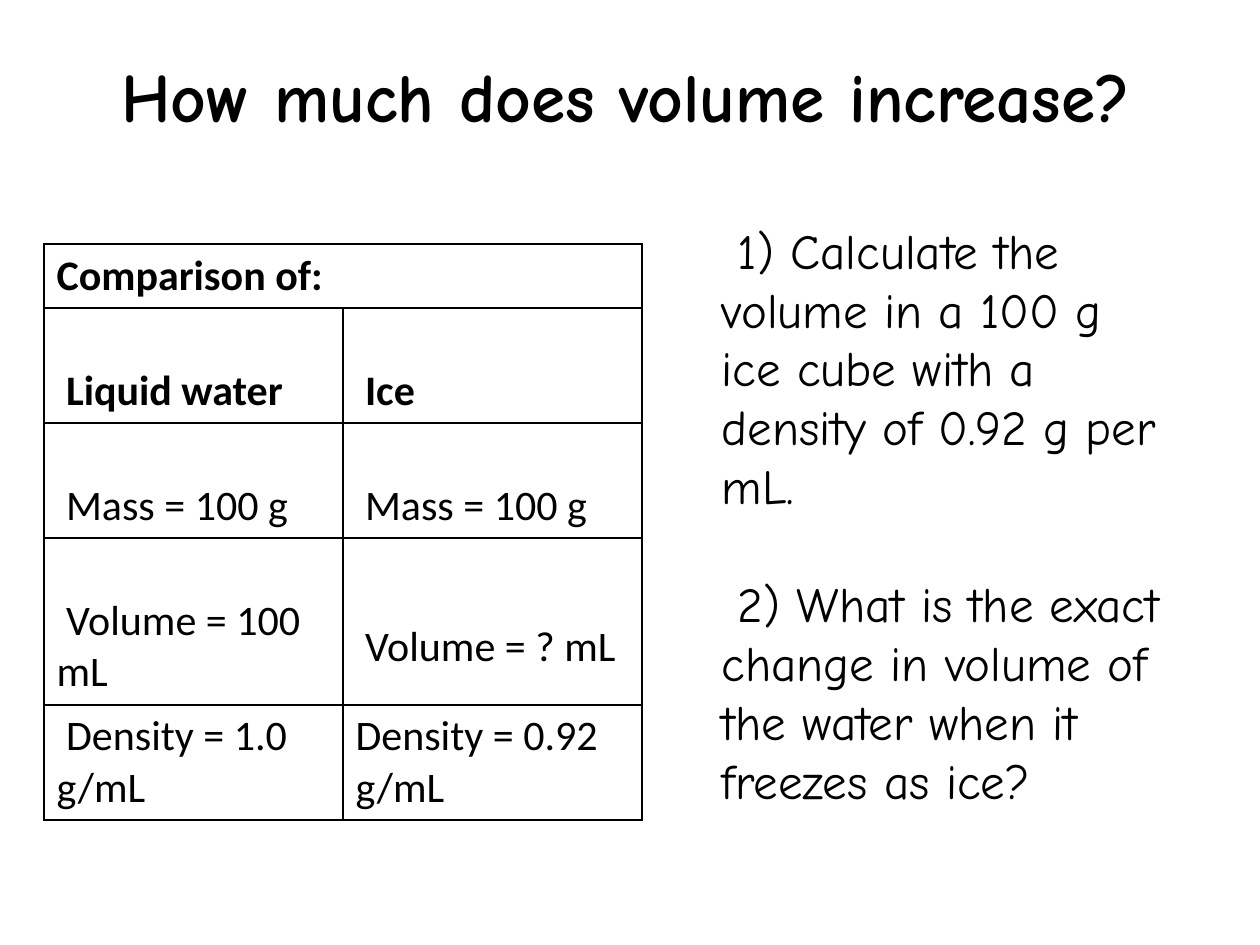
from lxml import etree
from pptx import Presentation
from pptx import util as u
from pptx.dml.color import RGBColor
from pptx.enum import text as t
from pptx.oxml.ns import qn

INK = "000000"
LINE = 51  # height of one line of table text

ROWS = [  # height, lines left free above the text, bold, words
    (64, 0, True, ["Comparison of:"]),
    (115, 1, True, [" Liquid water", " Ice"]),
    (115, 1, False, [" Mass = 100 g", " Mass = 100 g"]),
    (167, 1, False, [" Volume = 100 mL", " Volume = ? mL"]),
    (115, 0, False, [" Density = 1.0 g/mL", "Density = 0.92 g/mL"]),
]
TASKS = [
    " 1) Calculate the volume in a 100 g ice cube with a density of 0.92 g per mL.",
    " 2) What is the exact change in volume of the water when it freezes as ice?",
]


def px(n):
    return u.Emu(round(n * 914400 / 126))


def color(code):
    return RGBColor.from_string(code)


def write(para, words, size, font="Comic Neue", bold=False, align=t.PP_ALIGN.LEFT, gap=0):
    para.alignment = align
    para.space_before = u.Pt(gap)
    run = para.add_run()
    run.text = words
    run.font.size = u.Pt(size)
    run.font.name = font
    run.font.bold = bold
    run.font.color.rgb = color(INK)


def place(shape, box):
    shape.left, shape.top, shape.width, shape.height = map(px, box)
    frame = shape.text_frame
    frame.word_wrap = True
    frame.auto_size = t.MSO_AUTO_SIZE.NONE
    return frame


def title(slide, box):
    frame = place(slide.shapes.title, box)
    frame.vertical_anchor = t.MSO_ANCHOR.MIDDLE
    write(frame.paragraphs[0], "How much does volume increase?", 39.6,
          bold=True, align=t.PP_ALIGN.CENTER)


def tasks(slide, box):
    frame = place(slide.placeholders[1], box)
    frame.vertical_anchor = t.MSO_ANCHOR.TOP
    for i, words in enumerate(TASKS):
        para = frame.paragraphs[0] if i == 0 else frame.add_paragraph()
        write(para, words, 28, gap=34 * i)
        props = para._p.get_or_add_pPr()
        props.set("marL", "0")
        props.set("indent", "0")
        etree.SubElement(props, qn("a:buNone"))


def border(cell):
    props = cell._tc.get_or_add_tcPr()
    for i, side in enumerate(("lnL", "lnR", "lnT", "lnB")):
        line = etree.Element(qn("a:" + side), w=str(u.Pt(1)))
        fill = etree.SubElement(line, qn("a:solidFill"))
        etree.SubElement(fill, qn("a:srgbClr"), val=INK)
        props.insert(i, line)


def table(slide, box):
    grid = slide.shapes.add_table(len(ROWS), 2, *map(px, box)).table
    grid.first_row = grid.horz_banding = False
    for col in grid.columns:
        col.width = px(box[2] / 2)
    grid.cell(0, 0).merge(grid.cell(0, 1))
    for row, (high, free, bold, words) in enumerate(ROWS):
        grid.rows[row].height = px(high)
        for col in range(2):
            cell = grid.cell(row, col)
            cell.fill.background()
            border(cell)
            cell.vertical_anchor = t.MSO_ANCHOR.MIDDLE
            cell.margin_top = px(6 + free * LINE)
            if col < len(words):
                write(cell.text_frame.paragraphs[0], words[col], 24,
                      font="Calibri", bold=bold)


def main():
    deck = Presentation()
    deck.slide_width, deck.slide_height = px(1260), px(945)
    slide = deck.slides.add_slide(deck.slide_layouts[1])
    title(slide, (15, 16, 1221, 158))
    table(slide, (44, 244, 598, sum(row[0] for row in ROWS)))
    tasks(slide, (709, 214, 476, 665))
    deck.save("out.pptx")


if __name__ == "__main__":
    main()
